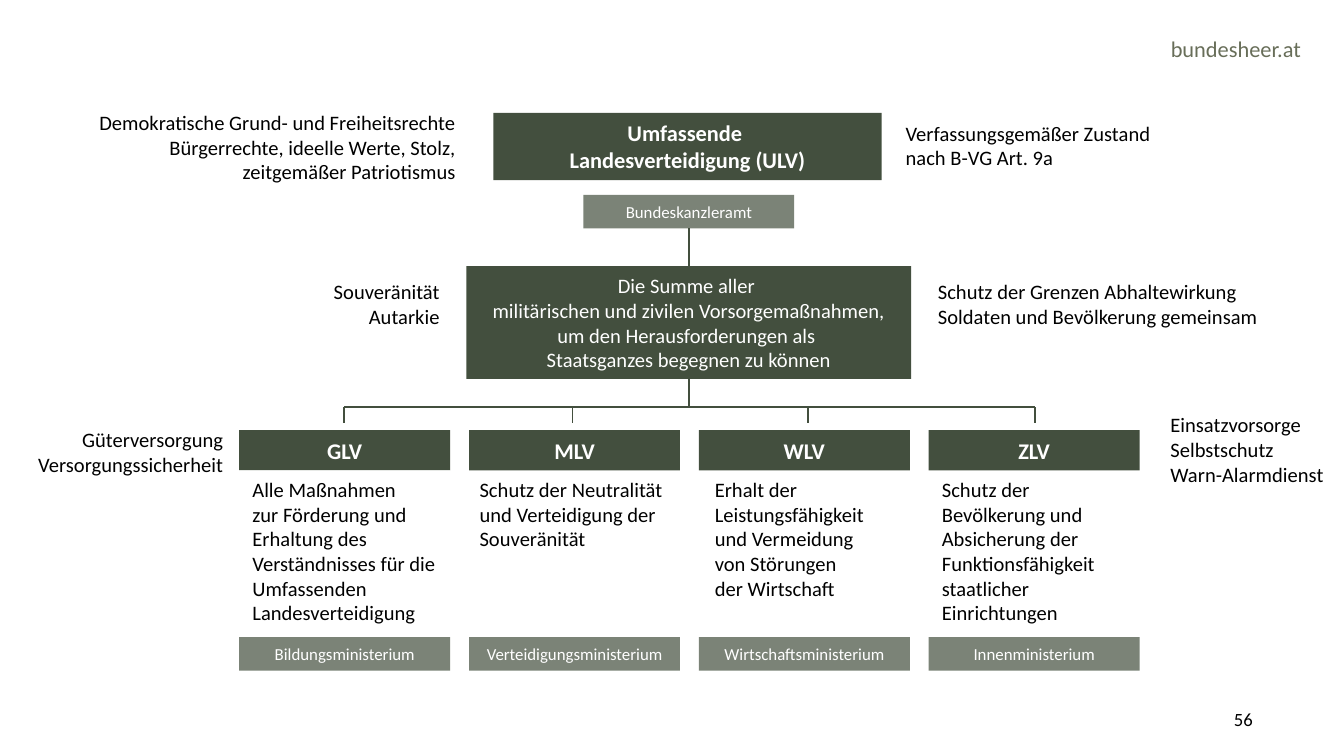
import pptx
import pptx.dml.color
import pptx.enum.shapes
import pptx.enum.text
import pptx.oxml
import pptx.oxml.ns
import pptx.util

Inches = pptx.util.Inches
ALIGN = pptx.enum.text.PP_ALIGN
ANCHOR = pptx.enum.text.MSO_ANCHOR
COLORS = {"green": "434F3E", "olive": "686E59", "black": "000000", "white": "FFFFFF"}
COLORS = {name: pptx.dml.color.RGBColor.from_string(code) for name, code in COLORS.items()}


def add_text(place, text, size=11, color="black", align=ALIGN.LEFT, bold=False,
             fill=None, opacity=100, inset=True, anchor=ANCHOR.TOP):
    """Add a text box, or a rectangle with text when a fill is given."""
    lengths = [Inches(value) for value in place]
    if fill:
        box = slide.shapes.add_shape(pptx.enum.shapes.MSO_SHAPE.RECTANGLE, *lengths)
        box.shadow.inherit = False
        box.line.fill.background()
        box.fill.solid()
        box.fill.fore_color.rgb = COLORS[fill]
        if opacity < 100:
            hue = box._element.spPr.find(".//" + pptx.oxml.ns.qn("a:srgbClr"))
            hue.append(pptx.oxml.parse_xml(
                f'<a:alpha {pptx.oxml.ns.nsdecls("a")} val="{opacity * 1000}"/>'))
    else:
        box = slide.shapes.add_textbox(*lengths)
    frame = box.text_frame
    frame.word_wrap = True
    frame.vertical_anchor = anchor
    if not inset:
        frame.margin_left = frame.margin_right = frame.margin_top = frame.margin_bottom = 0
    frame.text = text
    for paragraph in frame.paragraphs:
        paragraph.alignment = align
        paragraph.font.name = "Calibri"
        paragraph.font.size = pptx.util.Pt(size)
        paragraph.font.bold = bold
        paragraph.font.color.rgb = COLORS[color]
    return box


def add_line(x1, y1, x2, y2):
    line = slide.shapes.add_connector(
        pptx.enum.shapes.MSO_CONNECTOR.STRAIGHT,
        Inches(x1), Inches(y1), Inches(x2), Inches(y2))
    line.line.color.rgb = COLORS["green"]
    line.line.width = pptx.util.Pt(1)
    line._element.spPr.append(
        pptx.oxml.parse_xml(f'<a:effectLst {pptx.oxml.ns.nsdecls("a")}/>'))
    return line


deck = pptx.Presentation()
deck.slide_width = Inches(10)
deck.slide_height = deck.slide_width * 9 // 16
slide = deck.slides.add_slide(deck.slide_layouts[6])

# Header and page number
add_text((7.27, 0.26, 2.41, 0.2), "bundesheer.at", 12, "olive", ALIGN.RIGHT, inset=False)
add_text((8.27, 5.24, 1.05, 0.22), "56", 10, align=ALIGN.RIGHT, inset=False,
         anchor=ANCHOR.MIDDLE)

# Remarks on both sides of the chart
remarks = [
    ((0.63, 0.77, 2.86, 0.66), ALIGN.RIGHT,
     "Demokratische Grund- und Freiheitsrechte Bürgerrechte, ideelle Werte, Stolz, "
     "zeitgemäßer Patriotismus"),
    ((6.64, 0.85, 2.23, 0.47), ALIGN.LEFT, "Verfassungsgemäßer Zustand nach B-VG Art. 9a"),
    ((2.31, 2.03, 1.06, 0.47), ALIGN.RIGHT, "Souveränität\nAutarkie"),
    ((6.88, 2.03, 2.6, 0.47), ALIGN.LEFT,
     "Schutz der Grenzen Abhaltewirkung\nSoldaten und Bevölkerung gemeinsam"),
    ((0.02, 3.13, 1.74, 0.47), ALIGN.RIGHT, "Güterversorgung\nVersorgungssicherheit"),
    ((8.61, 3.02, 1.75, 0.66), ALIGN.LEFT, "Einsatzvorsorge\nSelbstschutz\nWarn-Alarmdienst"),
]
for place, align, text in remarks:
    add_text(place, text, align=align)

# Top of the hierarchy
bar = {"fill": "green", "color": "white", "align": ALIGN.CENTER, "anchor": ANCHOR.MIDDLE}
title_bar = {**bar, "size": 12, "bold": True}
office_bar = {**bar, "size": 9, "opacity": 70}
add_text((3.67, 0.84, 2.89, 0.5), "Umfassende \nLandesverteidigung (ULV)", **title_bar)
chancellery = add_text((4.34, 1.45, 1.57, 0.25), "Bundeskanzleramt", **office_bar)
summary = add_text((3.47, 1.98, 3.31, 0.84),
                   "Die Summe aller \vmilitärischen und zivilen Vorsorgemaßnahmen, "
                   "um den Herausforderungen als \vStaatsganzes begegnen zu können", **bar)

# Connecting lines
BUS_Y = 3.03
center_x = 3.47 + 3.31 / 2
chancellery_link = add_line(center_x, 1.7, center_x, 1.98)
chancellery_link.begin_connect(chancellery, 2)
chancellery_link.end_connect(summary, 0)
add_line(center_x, 2.82, center_x, BUS_Y).begin_connect(summary, 2)
add_line(7.7, BUS_Y, 2.56, BUS_Y)

# Four branches: title, branch line, task position, task fill, task, ministry
WIDTH, PITCH = 1.57, 1.71
branches = [
    ("GLV", 2.56, (1.78, 3.5, WIDTH, 1.26), "white",
     "Alle Maßnahmen \vzur Förderung und Erhaltung des Verständnisses "
     "für die Umfassenden Landesverteidigung", "Bildungsministerium"),
    ("MLV", 4.26, (3.47, 3.5, WIDTH, 0.66), None,
     "Schutz der Neutralität und Verteidigung der Souveränität", "Verteidigungsministerium"),
    ("WLV", 6.01, (5.22, 3.5, WIDTH, 1.03), None,
     "Erhalt der Leistungsfähigkeit und Vermeidung \vvon Störungen \vder Wirtschaft",
     "Wirtschaftsministerium"),
    ("ZLV", 7.7, (6.91, 3.5, WIDTH, 1.21), None,
     "Schutz der Bevölkerung und Absicherung der Funktionsfähigkeit "
     "staatlicher Einrichtungen", "Innenministerium"),
]
for index, (title, line_x, task_place, task_fill, task, ministry) in enumerate(branches):
    left = 1.78 + index * PITCH
    add_line(line_x, BUS_Y, line_x, 3.15)
    add_text((left, 3.2, WIDTH, 0.3), title, **title_bar)
    add_text(task_place, task, fill=task_fill)
    add_text((left, 4.74, WIDTH, 0.25), ministry, **office_bar)

deck.save("out.pptx")
